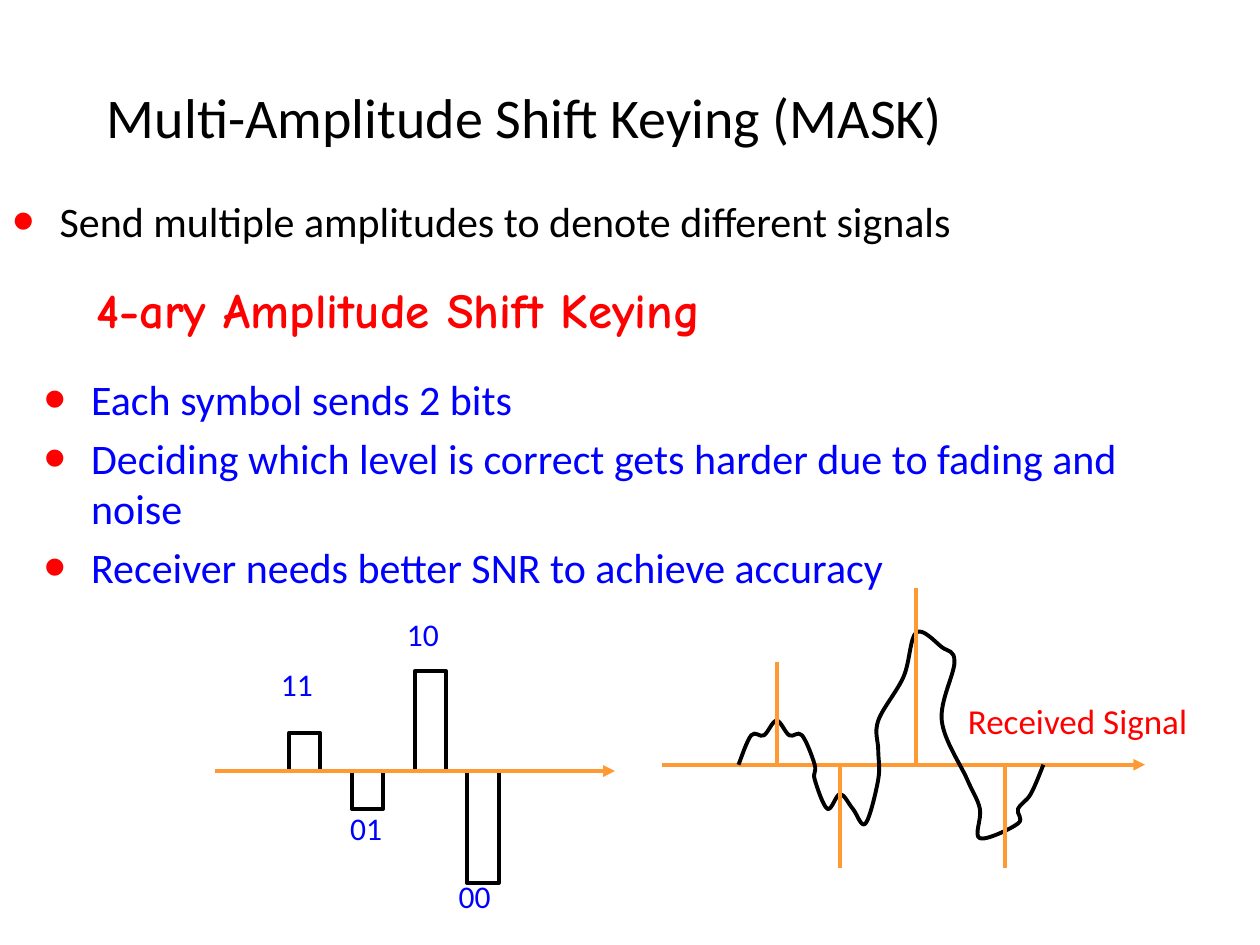
from lxml.etree import SubElement
from pptx import Presentation
from pptx.dml.color import RGBColor
from pptx.enum.shapes import MSO_CONNECTOR as Connector, MSO_SHAPE as Shape
from pptx.enum.text import MSO_ANCHOR as Anchor
from pptx.oxml.ns import qn
from pptx.util import Pt

BLACK = RGBColor(0, 0, 0)
RED = RGBColor(255, 0, 0)
BLUE = RGBColor(0, 0, 255)
ORANGE = RGBColor(0xFF, 0x99, 0x33)
LINE_WIDTH = 2.25
INDENT = 27

# Content: text, box (left, top, width, height), size, colour, font, anchor
HEADINGS = [
    ("Multi-Amplitude Shift Keying (MASK)", (54, 42, 522, 49), 32, BLACK, "Calibri", Anchor.MIDDLE),
    ("4-ary Amplitude Shift Keying", (48, 156, 612, 41), 28, RED, "Comic Neue", Anchor.MIDDLE),
    ("Received Signal", (546, 396, 155.5, 31), 20, RED, "Calibri", Anchor.TOP),
]
BULLET_LISTS = [
    (["Send multiple amplitudes to denote different signals"], (0, 108, 720, 60), BLACK),
    (["Each symbol sends 2 bits",
      "Deciding which level is correct gets harder due to fading and noise",
      "Receiver needs better SNR to achieve accuracy"], (18, 210, 668, 142), BLUE),
]

# Sent symbols: bits, bar left, signed amplitude, label left, label top
SYMBOLS = [
    ("11", 165, 21.6, 153.4, 376.6),
    ("10", 237, 57, 225.4, 347.8),
    ("01", 201, -21.6, 193, 458.6),
    ("00", 267, -64, 255, 497.5),
]
BAR_WIDTH = 18
SENT_AXIS = (123, 351.4, 440.6)

# Received signal, in grid steps from its start on the axis (up is positive)
GRID_LEFT, GRID_AXIS, STEP_X, STEP_Y = 422, 437, 7.26, 8.4
RECEIVED = [
    (0, 0), (1, 2), (2, 2), (3, 3), (4, 2), (5, 2), (6, 0), (6, -1), (7, -3),
    (8, -2), (9, -3), (10, -4), (11, -1), (11, 1), (11, 3), (13, 6), (14, 9),
    (16, 8), (17, 7), (16, 3), (18, -1), (19, -3), (19, -5), (22, -4),
    (22, -3), (23, -2), (24, 0),
]
SAMPLES = [(3, 7), (21, -7), (8, -7), (14, 12)]
RECEIVED_AXIS = (-6, 32)


def add_text(slide, lines, box, size, color, font="Calibri", anchor=Anchor.TOP, bullets=False):
    frame = slide.shapes.add_textbox(*map(Pt, box)).text_frame
    frame.word_wrap = True
    frame.vertical_anchor = anchor
    for index, line in enumerate(lines):
        paragraph = frame.add_paragraph() if index else frame.paragraphs[0]
        if index:
            paragraph.space_before = Pt(size * 0.2)
        if bullets:
            add_bullet(paragraph)
        run = paragraph.add_run()
        run.text = line
        run.font.name = font
        run.font.size = Pt(size)
        run.font.bold = font == "Comic Neue"
        run.font.color.rgb = color


def add_bullet(paragraph):
    properties = paragraph._p.get_or_add_pPr()
    properties.set("marL", str(Pt(INDENT)))
    properties.set("indent", str(-Pt(INDENT)))
    bullet_color = SubElement(properties, qn("a:buClr"))
    SubElement(bullet_color, qn("a:srgbClr"), val=str(RED))
    SubElement(properties, qn("a:buSzPct"), val="150000")
    SubElement(properties, qn("a:buFont"), typeface="Arial")
    SubElement(properties, qn("a:buChar"), char="•")


def add_line(slide, start, end, arrow=False):
    connector = slide.shapes.add_connector(Connector.STRAIGHT, *map(Pt, start + end))
    connector.line.color.rgb = ORANGE
    connector.line.width = Pt(LINE_WIDTH)
    if arrow:
        SubElement(connector.line._get_or_add_ln(), qn("a:tailEnd"), type="triangle")
    SubElement(connector._element.spPr, qn("a:effectLst"))


def outline(shape):
    shape.fill.background()
    shape.line.color.rgb = BLACK
    shape.line.width = Pt(LINE_WIDTH)
    shape.shadow.inherit = False


def grid_point(x, y):
    return GRID_LEFT + x * STEP_X, GRID_AXIS - y * STEP_Y


def add_curve(slide, knots):
    points = [tuple(map(Pt, grid_point(*knot))) for knot in knots]
    builder = slide.shapes.build_freeform(*points[0])
    builder.add_line_segments(points[1:], close=False)
    shape = builder.convert_to_shape()
    outline(shape)
    # Turn each straight segment into a cubic through the neighbouring knots
    local = [(x - shape.left, y - shape.top) for x, y in points]
    padded = [local[0], *local, local[-1]]
    segments = list(shape._element.iter(qn("a:lnTo")))
    for segment, before, start, end, after in zip(segments, padded, padded[1:], padded[2:], padded[3:]):
        first = [s + (e - b) / 6 for b, s, e in zip(before, start, end)]
        second = [e - (a - s) / 6 for s, e, a in zip(start, end, after)]
        cubic = segment.makeelement(qn("a:cubicBezTo"))
        for x, y in (first, second, end):
            SubElement(cubic, qn("a:pt"), x=str(round(x)), y=str(round(y)))
        segment.getparent().replace(segment, cubic)


def main():
    presentation = Presentation()
    presentation.slide_width, presentation.slide_height = Pt(720), Pt(540)
    slide = presentation.slides.add_slide(presentation.slide_layouts[6])

    # Headings and bullet lists
    for text, box, size, color, font, anchor in HEADINGS:
        add_text(slide, [text], box, size, color, font, anchor)
    for lines, box, color in BULLET_LISTS:
        add_text(slide, lines, box, 24, color, bullets=True)

    # Sent symbols
    axis_left, axis_right, axis_y = SENT_AXIS
    for bits, left, amplitude, label_left, label_top in SYMBOLS:
        top = axis_y - max(amplitude, 0)
        bar = slide.shapes.add_shape(
            Shape.RECTANGLE, Pt(left), Pt(top), Pt(BAR_WIDTH), Pt(abs(amplitude)))
        outline(bar)
        add_text(slide, [bits], (label_left, label_top, 48, 42), 18, BLUE)
    add_line(slide, (axis_left, axis_y), (axis_right, axis_y), arrow=True)

    # Received signal with its sampling instants
    axis_start, axis_end = RECEIVED_AXIS
    add_line(slide, grid_point(axis_start, 0), grid_point(axis_end, 0), arrow=True)
    add_curve(slide, RECEIVED)
    for x, height in SAMPLES:
        add_line(slide, grid_point(x, 0), grid_point(x, height))

    presentation.save("out.pptx")


if __name__ == "__main__":
    main()
